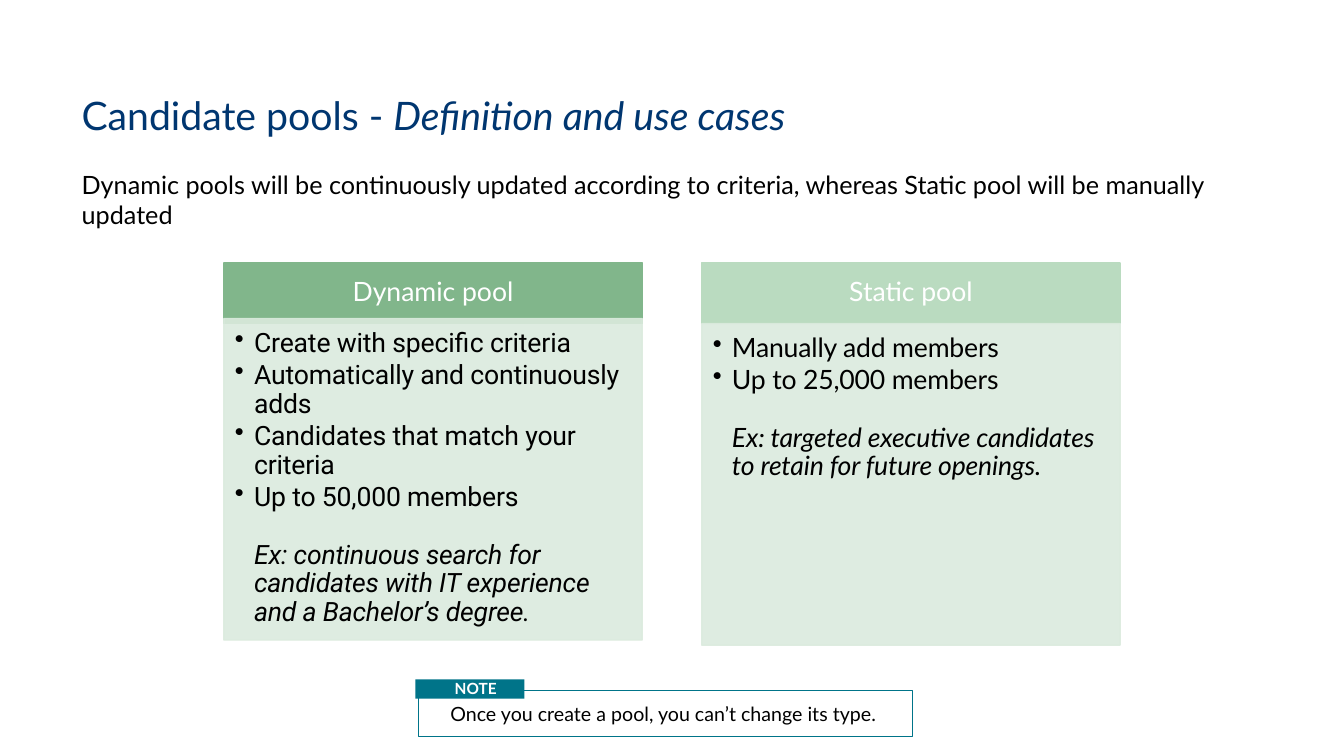
from lxml import etree
from pptx import Presentation
from pptx.dml.color import RGBColor
from pptx.enum.shapes import MSO_SHAPE
from pptx.enum.text import MSO_ANCHOR, PP_ALIGN
from pptx.oxml.ns import qn
from pptx.util import Emu, Pt

RECT = MSO_SHAPE.RECTANGLE
TOP, MIDDLE, BOTTOM = MSO_ANCHOR.TOP, MSO_ANCHOR.MIDDLE, MSO_ANCHOR.BOTTOM
LEFT, CENTER = PP_ALIGN.LEFT, PP_ALIGN.CENTER

SCALE = 9144  # 100 px to the inch
COLORS = {
    "title": "003670", "text": "000000", "white": "FFFFFF", "note": "007489",
    "dynamic": "81B68B", "static": "BADBC0", "panel": "DBEBDE",
}


def px(n):
    return Emu(n * SCALE)


def rgb(name):
    return RGBColor.from_string(COLORS[name])


def add_text(p, text, size=19, font="Lato", color="text", bold=False,
             italic=False, spacing=0):
    r = p.add_run()
    r.text = text
    f = r.font
    f.size, f.name, f.bold, f.italic = Pt(size), font, bold, italic
    f.color.rgb = rgb(color)
    if spacing:
        r._r.get_or_add_rPr().set("spc", str(spacing))


class Slide:
    def __init__(self, prs):
        self.s = prs.slides.add_slide(prs.slide_layouts[6])

    def frame(self, sp, insets, anchor):
        tf = sp.text_frame
        tf.word_wrap = True
        tf.vertical_anchor = anchor
        (tf.margin_left, tf.margin_top,
         tf.margin_right, tf.margin_bottom) = map(px, insets)
        return tf

    def textbox(self, box, insets=(0, 5, 10, 5), anchor=TOP):
        sp = self.s.shapes.add_textbox(*map(px, box))
        return self.frame(sp, insets, anchor)

    def rect(self, box, fill=None, line=None, alpha=100,
             insets=(0, 0, 0, 0), anchor=MIDDLE, align=CENTER):
        sp = self.s.shapes.add_shape(RECT, *map(px, box))
        sp.shadow.inherit = False
        if fill:
            sp.fill.solid()
            sp.fill.fore_color.rgb = rgb(fill)
        else:
            sp.fill.background()
        if line:
            sp.line.color.rgb = rgb(line)
            sp.line.width = Pt(1)
        else:
            sp.line.fill.background()
        if alpha < 100:
            for clr in sp._element.spPr.iter(qn("a:srgbClr")):
                etree.SubElement(clr, qn("a:alpha"), val=str(alpha * 1000))
        tf = self.frame(sp, insets, anchor)
        tf.paragraphs[0].alignment = align
        return tf

    def pool(self, x, body_y, name, fill, font, bullets, example):
        # Header
        tf = self.rect((x, 261, 415, 60), fill, fill, insets=(15, 8, 15, 8))
        p = tf.paragraphs[0]
        p.line_spacing = 0.9
        add_text(p, name, color="white")
        # Panel with bullets, then the unbulleted example
        tf = self.rect((x, body_y, 415, 319), "panel", "panel", alpha=90,
                       insets=(11, 11, 15, 17), anchor=TOP)
        for i, text in enumerate(bullets + [example]):
            p = tf.add_paragraph() if i else tf.paragraphs[0]
            is_example = text is example
            pPr = p._p.get_or_add_pPr()
            pPr.set("marL", str(px(19)))
            pPr.set("indent", str(0 if is_example else -px(19)))
            if not is_example:
                etree.SubElement(pPr, qn("a:buChar"), char="•")
            p.alignment = LEFT
            p.line_spacing = 0.9
            p.space_after = Pt(2.5)
            if is_example:
                p.space_before = Pt(18)
            add_text(p, text, font=font, italic=is_example, spacing=-10)


def main():
    prs = Presentation()
    prs.slide_width, prs.slide_height = px(1333), px(750)
    slide = Slide(prs)

    # Title and introduction
    p = slide.textbox((81, 54, 1173, 89), anchor=BOTTOM).paragraphs[0]
    p.line_spacing = 0.9
    add_text(p, "Candidate pools - ", size=28, color="title")
    add_text(p, "Definition and use cases", size=28, color="title", italic=True)
    p = slide.textbox((81, 163, 1199, 75)).paragraphs[0]
    add_text(p, "Dynamic pools will be continuously updated according to "
                "criteria, whereas Static pool will be manually updated", size=18)

    # Pools
    slide.pool(222, 316, "Dynamic pool", "dynamic", "Roboto",
               ["Create with specific criteria",
                "Automatically and continuously adds",
                "Candidates that match your criteria",
                "Up to 50,000 members"],
               "Ex: continuous search for candidates with IT experience "
               "and a Bachelor’s degree.")
    slide.pool(696, 321, "Static pool", "static", "Lato",
               ["Manually add members", "Up to 25,000 members"],
               "Ex: targeted executive candidates to retain for future openings.")

    # Note
    tf = slide.rect((415, 685, 490, 46), line="note", insets=(12, 0, 16, 0))
    add_text(tf.paragraphs[0], "Once you create a pool, you can’t change its type.",
             size=14)
    tf = slide.rect((412, 674, 108, 19), "note", insets=(39, 0, 4, 0),
                    anchor=TOP, align=LEFT)
    add_text(tf.paragraphs[0], "NOTE", size=11, color="white", bold=True)

    prs.save("out.pptx")


if __name__ == "__main__":
    main()
